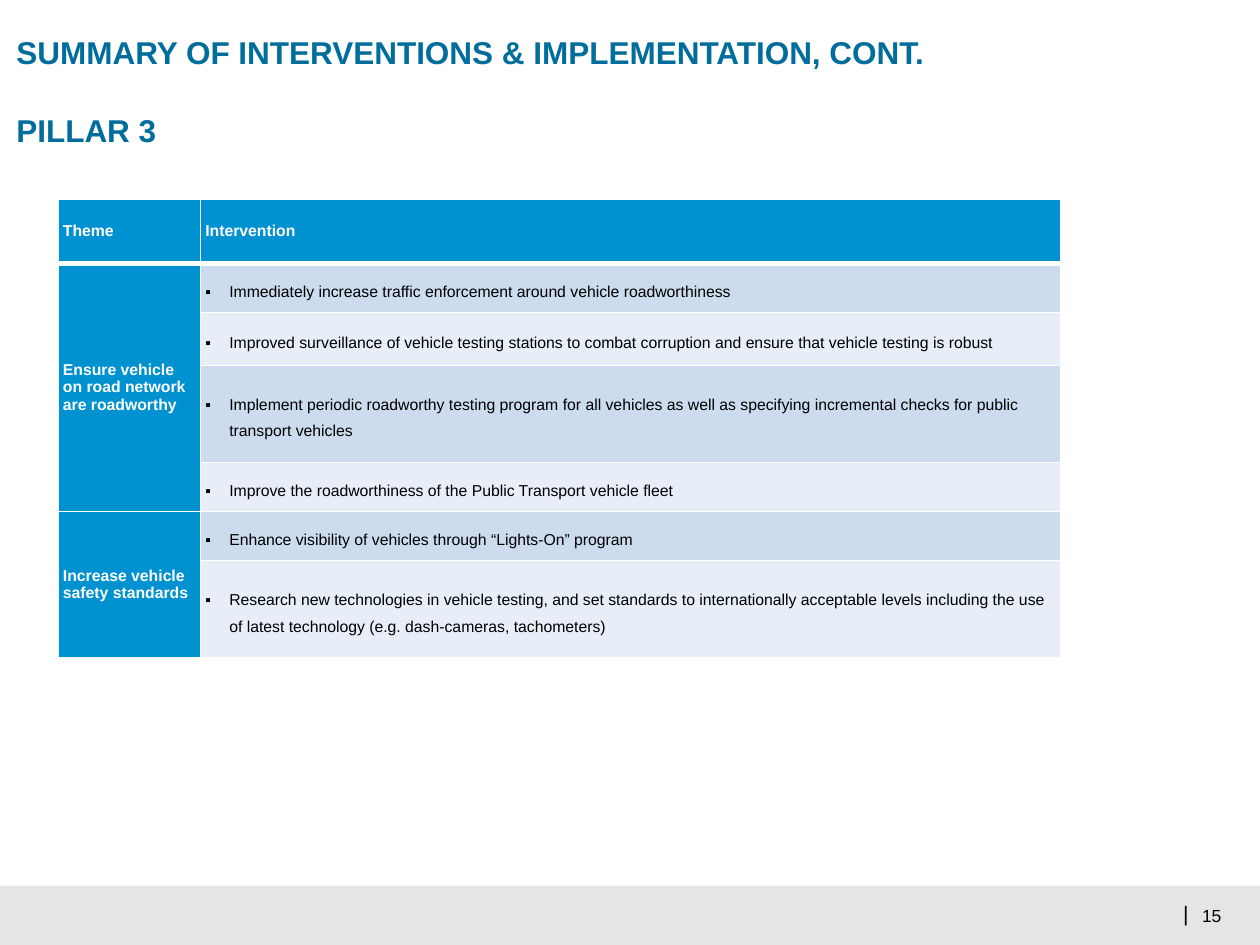
from pptx import Presentation
from pptx.dml.color import RGBColor
from pptx.enum.shapes import MSO_SHAPE
from pptx.enum.text import MSO_ANCHOR, MSO_AUTO_SIZE, PP_ALIGN
from pptx.oxml import parse_xml
from pptx.oxml.ns import nsdecls
from pptx.util import Inches, Pt

FONT = "Arial"
WHITE = RGBColor(0xFF, 0xFF, 0xFF)
BLACK = RGBColor(0, 0, 0)
FOOTER_GREY = RGBColor(0xE5, 0xE5, 0xE5)
TITLE_BLUE = RGBColor(0x00, 0x6D, 0x9C)
THEME_BLUE = RGBColor(0x00, 0x91, 0xD0)
BANDS = (RGBColor(0xCC, 0xDC, 0xEE), RGBColor(0xE7, 0xEE, 0xF7))

TITLE_LINES = ("SUMMARY OF INTERVENTIONS & IMPLEMENTATION, CONT.", "PILLAR 3")
HEADINGS = ("Theme", "Intervention")
THEMES = {
    "Ensure vehicle on road network are roadworthy": (
        "Immediately increase traffic enforcement around vehicle roadworthiness",
        "Improved surveillance of vehicle testing stations to combat corruption "
        "and ensure that vehicle testing is robust",
        "Implement periodic roadworthy testing program for all vehicles as well "
        "as specifying incremental checks for public transport vehicles",
        "Improve the roadworthiness of the Public Transport vehicle fleet",
    ),
    "Increase vehicle safety standards": (
        "Enhance visibility of vehicles through “Lights-On” program",
        "Research new technologies in vehicle testing, and set standards to "
        "internationally acceptable levels including the use of latest "
        "technology (e.g. dash-cameras, tachometers)",
    ),
}
COLUMN_WIDTHS = (1.13, 6.83)
ROW_HEIGHTS = (0.51, 0.39, 0.42, 0.77, 0.39, 0.39, 0.77)


def add_run(paragraph, text, size, color, bold=False):
    run = paragraph.add_run()
    run.text = text
    run.font.name = FONT
    run.font.size = Pt(size)
    run.font.bold = bold
    run.font.color.rgb = color


def clear_margins(frame):
    frame.margin_left = frame.margin_right = 0
    frame.margin_top = frame.margin_bottom = 0


def fill_title(title):
    title.left, title.top = Inches(0.13), Inches(0.26)
    title.width, title.height = Inches(9.62), Inches(0.91)
    frame = title.text_frame
    clear_margins(frame)
    frame.word_wrap = True
    frame.auto_size = MSO_AUTO_SIZE.NONE
    frame.vertical_anchor = MSO_ANCHOR.TOP
    for index, line in enumerate(TITLE_LINES):
        paragraph = frame.add_paragraph() if index else frame.paragraphs[0]
        paragraph.alignment = PP_ALIGN.LEFT
        paragraph.line_spacing = 1.0
        paragraph.space_before = Pt(23 if index else 0)
        add_run(paragraph, line, 18, TITLE_BLUE, bold=True)


def add_footer_text(slide, text, left, top, width, height, size, align):
    box = slide.shapes.add_textbox(
        Inches(left), Inches(top), Inches(width), Inches(height))
    frame = box.text_frame
    clear_margins(frame)
    frame.word_wrap = False
    frame.vertical_anchor = MSO_ANCHOR.MIDDLE
    frame.paragraphs[0].alignment = align
    add_run(frame.paragraphs[0], text, size, BLACK)


def add_footer(slide):
    band = slide.shapes.add_shape(
        MSO_SHAPE.RECTANGLE, 0, Inches(7.03), Inches(10), Inches(0.47))
    band.shadow.inherit = False
    band.fill.solid()
    band.fill.fore_color.rgb = FOOTER_GREY
    band.line.fill.background()
    add_footer_text(slide, "15", 9.54, 7.18, 0.18, 0.17, 10, PP_ALIGN.LEFT)
    add_footer_text(slide, "|", 9.39, 7.15, 0.04, 0.2, 12, PP_ALIGN.RIGHT)


def style_cell(cell, color, top=1, bottom=1):
    """Set margins, white borders (widths in points) and fill."""
    cell.margin_left = cell.margin_right = Inches(0.04)
    cell.margin_top = cell.margin_bottom = 0
    cell.vertical_anchor = MSO_ANCHOR.MIDDLE
    properties = cell._tc.get_or_add_tcPr()
    for side, width in (("L", 1), ("R", 1), ("T", top), ("B", bottom)):
        properties.append(parse_xml(
            f'<a:ln{side} {nsdecls("a")} w="{Pt(width)}"><a:solidFill>'
            f'<a:srgbClr val="{WHITE}"/></a:solidFill></a:ln{side}>'))
    cell.fill.solid()
    cell.fill.fore_color.rgb = color


def write_cell(cell, text, color, bold=False, bullet=False):
    paragraph = cell.text_frame.paragraphs[0]
    paragraph.space_before = paragraph.space_after = Pt(2)
    if bullet:
        paragraph.line_spacing = 1.5
        properties = paragraph._p.get_or_add_pPr()
        properties.set("marL", str(Inches(0.19)))
        properties.set("indent", str(-Inches(0.19)))
        properties.append(parse_xml(
            f'<a:buFont {nsdecls("a")} typeface="{FONT}"/>'))
        properties.append(parse_xml(f'<a:buChar {nsdecls("a")} char="▪"/>'))
    add_run(paragraph, text, 9, color, bold)


def add_interventions_table(slide):
    table = slide.shapes.add_table(
        len(ROW_HEIGHTS), len(COLUMN_WIDTHS), Inches(0.46), Inches(1.58),
        Inches(sum(COLUMN_WIDTHS)), Inches(sum(ROW_HEIGHTS))).table
    table.first_row = table.horz_banding = False
    for column, width in zip(table.columns, COLUMN_WIDTHS):
        column.width = Inches(width)
    for row, height in zip(table.rows, ROW_HEIGHTS):
        row.height = Inches(height)

    # Header row
    for column, heading in enumerate(HEADINGS):
        style_cell(table.cell(0, column), THEME_BLUE, bottom=3)
        write_cell(table.cell(0, column), heading, WHITE, bold=True)

    # One merged theme cell beside its interventions
    row = 1
    for theme, interventions in THEMES.items():
        first = row
        for intervention in interventions:
            top = 3 if row == 1 else 1
            style_cell(table.cell(row, 0), THEME_BLUE, top=top)
            style_cell(table.cell(row, 1), BANDS[(row - 1) % 2], top=top)
            write_cell(table.cell(row, 1), intervention, BLACK, bullet=True)
            row += 1
        table.cell(first, 0).merge(table.cell(row - 1, 0))
        write_cell(table.cell(first, 0), theme, WHITE, bold=True)


def main():
    deck = Presentation()
    deck.slide_width, deck.slide_height = Inches(10), Inches(7.5)
    slide = deck.slides.add_slide(deck.slide_layouts[5])
    add_footer(slide)
    fill_title(slide.shapes.title)
    add_interventions_table(slide)
    deck.save("out.pptx")


if __name__ == "__main__":
    main()
